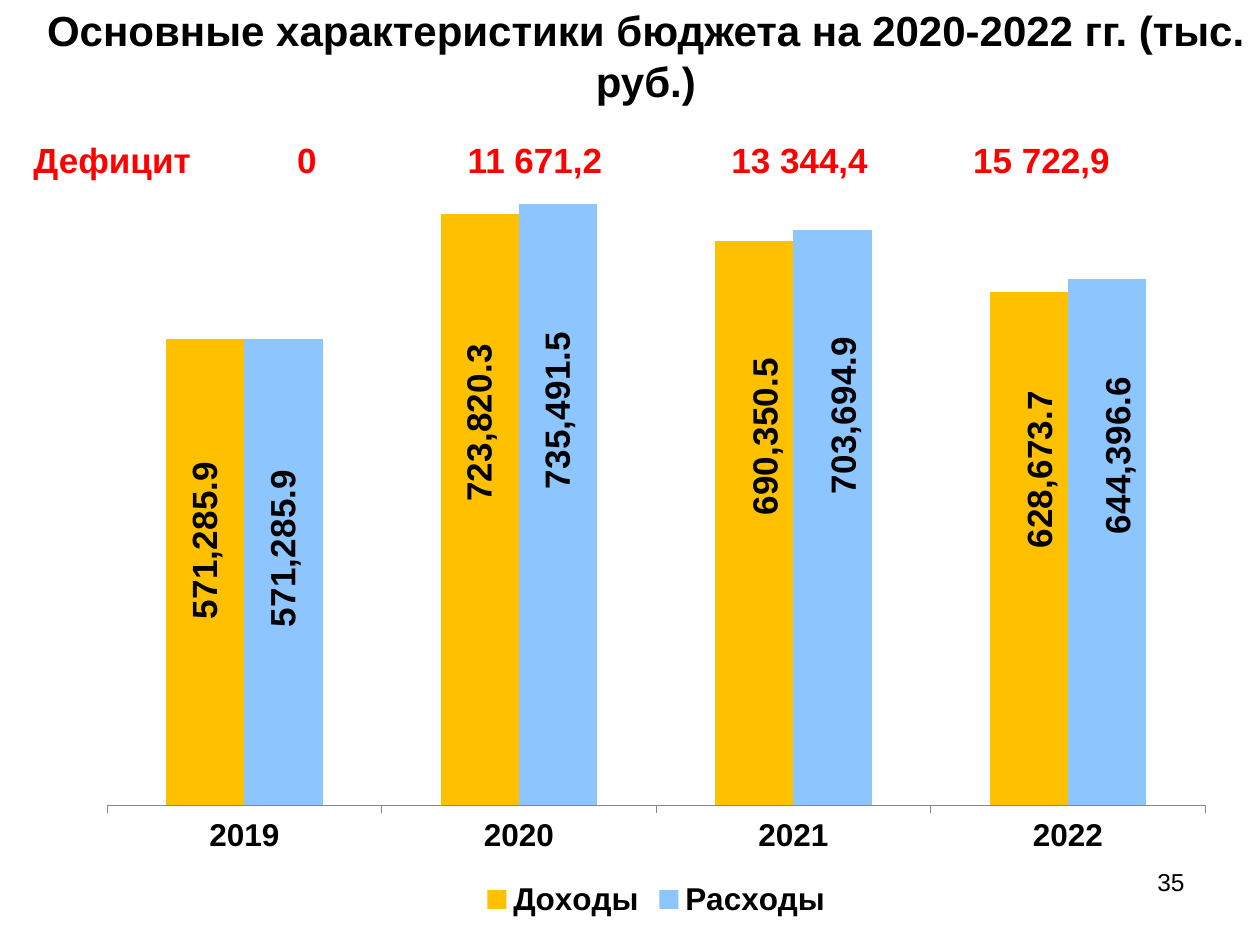
from lxml import etree
from pptx import Presentation
from pptx.chart import data
from pptx.dml.color import RGBColor
from pptx.enum import chart as chart_enum, text
from pptx.oxml import ns
from pptx.util import Cm, Pt

BLACK = RGBColor(0x00, 0x00, 0x00)
RED = RGBColor(0xFF, 0x00, 0x00)
WHITE = RGBColor(0xFF, 0xFF, 0xFF)
GOLD = RGBColor(0xFF, 0xC0, 0x00)
BLUE = RGBColor(0x8D, 0xC6, 0xFF)
GREY = RGBColor(0x86, 0x86, 0x86)
FONT = "Arial"

YEARS = ["2019", "2020", "2021", "2022"]
# name, colour, values, label shifts from the bar centre as shares of the chart
SERIES = [
    ("Доходы", GOLD, [571285.9, 723820.3, 690350.5, 628673.7],
     [(0, -0.04), (0, -0.11), (0.01, -0.11), (0.01, -0.1)]),
    ("Расходы", BLUE, [571285.9, 735491.5, 703694.9, 644396.6],
     [(0, -0.03), (0, -0.12), (0.01, -0.13), (0.01, -0.11)]),
]
NUMBER_FORMAT = "#,##0.0"
DEFICIT = ["Дефицит", "0", "11 671,2", "13 344,4", "15 722,9"]
DEFICIT_WIDTHS = [3.91, 3.71, 5.49, 5.18, 4.57]


def style_font(font, size, color=BLACK, bold=False):
    font.name, font.size, font.bold = FONT, Pt(size), bold
    font.color.rgb = color


def write_text(frame, content, *, size, color=BLACK, bold=False,
               align=text.PP_ALIGN.LEFT, anchor=text.MSO_ANCHOR.TOP):
    frame.word_wrap = True
    frame.vertical_anchor = anchor
    paragraph = frame.paragraphs[0]
    paragraph.alignment = align
    run = paragraph.add_run()
    run.text = content
    style_font(run.font, size, color, bold)


def add_text(slide, content, left, top, width, height, **style):
    box = slide.shapes.add_textbox(Cm(left), Cm(top), Cm(width), Cm(height))
    write_text(box.text_frame, content, **style)


def make_layout(**settings):
    """Return a manual c:layout element."""
    layout = etree.Element(ns.qn("c:layout"))
    manual = etree.SubElement(layout, ns.qn("c:manualLayout"))
    for name, value in settings.items():
        etree.SubElement(manual, ns.qn(f"c:{name}")).set("val", str(value))
    return layout


def add_bar_label(series, index, shift):
    """Label one bar with its value, turned upright and shifted."""
    label = series.points[index].data_label
    style_font(label.font, 20, bold=True)
    label.position = chart_enum.XL_LABEL_POSITION.CENTER
    element = series.data_labels._element.findall(ns.qn("c:dLbl"))[index]
    body = element.find(ns.qn("c:txPr")).find(ns.qn("a:bodyPr"))
    body.set("rot", "-5400000")
    body.set("vert", "horz")
    number_format = etree.Element(ns.qn("c:numFmt"))
    number_format.set("formatCode", NUMBER_FORMAT)
    number_format.set("sourceLinked", "0")
    element.insert(1, make_layout(x=shift[0], y=shift[1]))
    element.insert(2, number_format)


def hide_leader_lines(series):
    labels = series.data_labels._element
    for leader_lines in labels.findall(ns.qn("c:showLeaderLines")):
        leader_lines.set("val", "0")


def add_budget_chart(slide):
    chart_data = data.CategoryChartData(number_format=NUMBER_FORMAT)
    chart_data.categories = YEARS
    for name, _, values, _ in SERIES:
        chart_data.add_series(name, values)
    chart = slide.shapes.add_chart(
        chart_enum.XL_CHART_TYPE.COLUMN_CLUSTERED,
        Cm(1.7), Cm(2.74), Cm(23.06), Cm(15.88), chart_data).chart
    style_font(chart.font, 18)
    chart.has_title = False
    chart.has_legend = True
    chart.legend.position = chart_enum.XL_LEGEND_POSITION.BOTTOM
    chart.legend.include_in_layout = False
    style_font(chart.legend.font, 18, bold=True)

    style_font(chart.category_axis.tick_labels.font, 18, bold=True)
    chart.category_axis.format.line.color.rgb = GREY
    chart.value_axis.visible = False
    chart.value_axis.has_major_gridlines = False
    chart.value_axis.minimum_scale = 200
    chart.value_axis.maximum_scale = 800000

    plot = chart.plots[0]
    plot.gap_width, plot.overlap = 150, 0
    plot.vary_by_categories = False
    for series, (_, color, _, shifts) in zip(plot.series, SERIES):
        series.format.fill.solid()
        series.format.fill.fore_color.rgb = color
        for index, shift in enumerate(shifts):
            add_bar_label(series, index, shift)
        hide_leader_lines(series)

    plot_area = chart._chartSpace.chart.plotArea
    for old_layout in plot_area.findall(ns.qn("c:layout")):
        plot_area.remove(old_layout)
    plot_area.insert(0, make_layout(
        layoutTarget="inner", xMode="edge", yMode="edge",
        x=0.02, y=0.02, w=0.96, h=0.83))


def add_deficit_table(slide):
    table = slide.shapes.add_table(
        1, len(DEFICIT), Cm(0.42), Cm(2.74),
        Cm(sum(DEFICIT_WIDTHS)), Cm(1.07)).table
    for index, (content, width) in enumerate(zip(DEFICIT, DEFICIT_WIDTHS)):
        table.columns[index].width = Cm(width)
        cell = table.cell(0, index)
        cell.fill.solid()
        cell.fill.fore_color.rgb = WHITE
        align = text.PP_ALIGN.CENTER if index else text.PP_ALIGN.LEFT
        write_text(cell.text_frame, content, size=20, color=RED, bold=True,
                   align=align)


def main():
    presentation = Presentation()
    presentation.slide_width, presentation.slide_height = Cm(25.4), Cm(19.05)
    slide = presentation.slides.add_slide(presentation.slide_layouts[6])
    add_text(slide, "Основные характеристики бюджета на 2020-2022 гг. (тыс. руб.)",
             0.64, 0.64, 24.76, 0.94, size=24, bold=True,
             align=text.PP_ALIGN.CENTER, anchor=text.MSO_ANCHOR.MIDDLE)
    add_budget_chart(slide)
    add_text(slide, "35", 18.2, 17.36, 5.93, 1.32, size=14,
             align=text.PP_ALIGN.RIGHT)
    add_deficit_table(slide)
    presentation.save("out.pptx")


if __name__ == "__main__":
    main()
